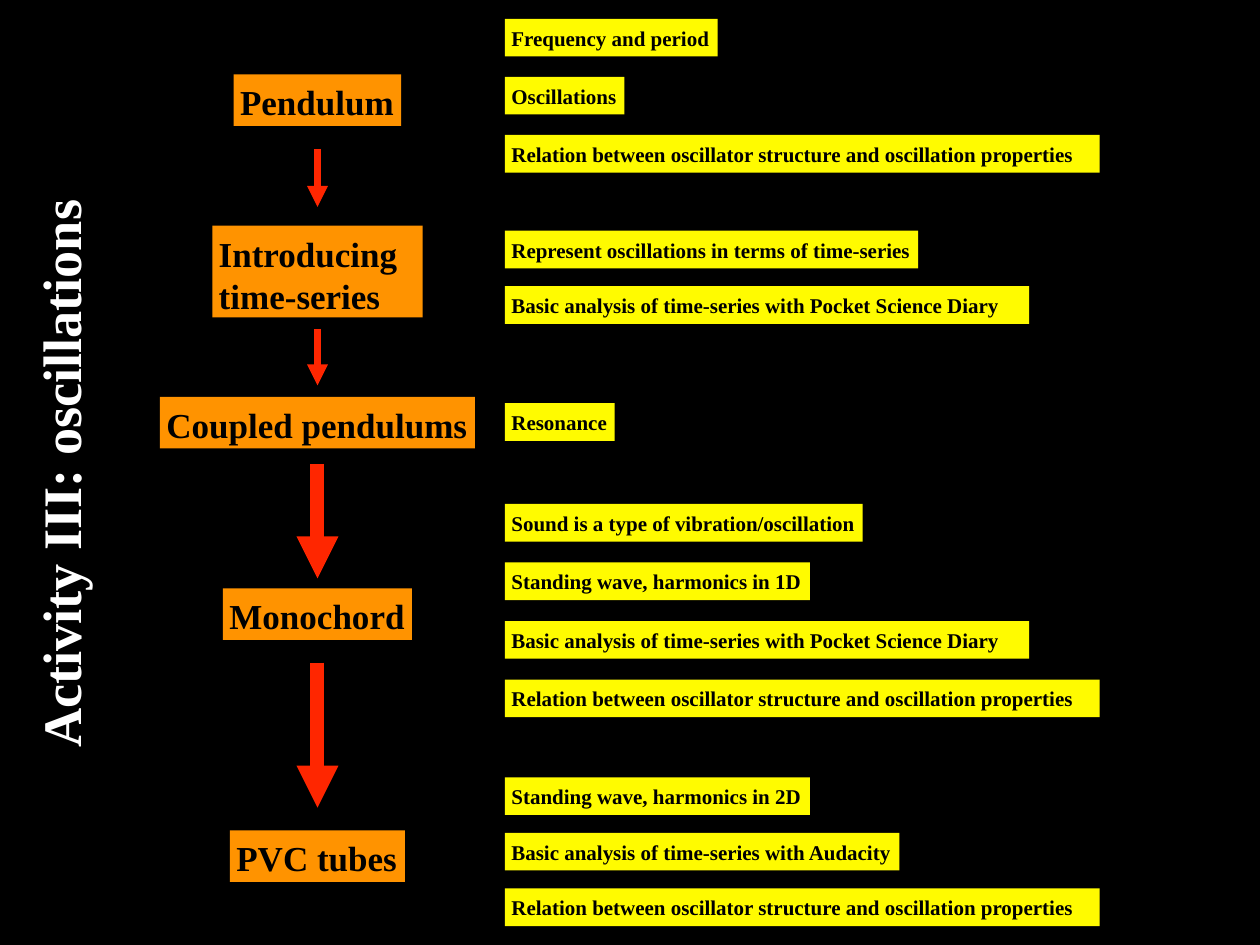
from lxml import etree
from pptx import Presentation
from pptx import util as u
from pptx.dml.color import RGBColor
from pptx.enum import shapes, text
from pptx.oxml.ns import qn

FONT = "Times New Roman"
BLACK, WHITE, ORANGE, YELLOW, RED = "000000", "FFFFFF", "FF9300", "FFFB00", "FF2600"

TITLE = "Activity III: oscillations"
STRUCTURE = ("Relation between oscillator structure and oscillation properties", 11.99)
DIARY = ("Basic analysis of time-series with Pocket Science Diary", 10.57)

# All lengths in cm; each topic is (wording, width).
STAGES = [
    {"name": "Pendulum", "top": 1.5, "width": 3.38, "height": 1.04,
     "topics_top": 0.38, "pitch": 1.17,
     "topics": [("Frequency and period", 4.29), ("Oscillations", 2.41), STRUCTURE]},
    {"name": "Introducing\ntime-series", "top": 4.55, "width": 4.24, "height": 1.85,
     "topics_top": 4.65, "pitch": 1.12,
     "topics": [("Represent oscillations in terms of time-series", 8.33), DIARY]},
    {"name": "Coupled pendulums", "top": 8.0, "width": 6.35, "height": 1.04,
     "topics_top": 8.13, "pitch": 1.12,
     "topics": [("Resonance", 2.21)]},
    {"name": "Monochord", "top": 11.86, "width": 3.81, "height": 1.04,
     "topics_top": 10.16, "pitch": 1.18,
     "topics": [("Sound is a type of vibration/oscillation", 7.21),
                ("Standing wave, harmonics in 1D", 6.15), DIARY, STRUCTURE]},
    {"name": "PVC tubes", "top": 16.74, "width": 3.53, "height": 1.04,
     "topics_top": 15.67, "pitch": 1.12,
     "topics": [("Standing wave, harmonics in 2D", 6.15),
                ("Basic analysis of time-series with Audacity", 7.95), STRUCTURE]},
]
# Start, end, line width in points
ARROWS = [(3.0, 4.17, 4), (6.63, 7.77, 4), (9.35, 11.66, 8), (13.36, 16.28, 8)]

STAGE_CENTRE, TOPIC_LEFT, TOPIC_HEIGHT = 6.4, 10.18, 0.76


def rgb(value):
    return RGBColor.from_string(value)


def add_label(slide, wording, left, top, width, height, size, color, fill=None, wrap=False):
    label = slide.shapes.add_textbox(u.Cm(left), u.Cm(top), u.Cm(width), u.Cm(height))
    if fill:
        label.fill.solid()
        label.fill.fore_color.rgb = rgb(fill)
    frame = label.text_frame
    frame.margin_left = frame.margin_right = u.Cm(0.13)
    frame.margin_top = frame.margin_bottom = u.Cm(0.13)
    frame.word_wrap = wrap
    frame.auto_size = text.MSO_AUTO_SIZE.SHAPE_TO_FIT_TEXT
    frame.text = wording
    for paragraph in frame.paragraphs:
        for run in paragraph.runs:
            run.font.name = FONT
            run.font.size = u.Pt(size)
            run.font.bold = True
            run.font.color.rgb = rgb(color)
    return label


def add_down_arrow(slide, start, end, weight):
    arrow = slide.shapes.add_connector(
        shapes.MSO_CONNECTOR.STRAIGHT,
        u.Cm(STAGE_CENTRE), u.Cm(start), u.Cm(STAGE_CENTRE), u.Cm(end))
    arrow.line.color.rgb = rgb(RED)
    arrow.line.width = u.Pt(weight)
    etree.SubElement(arrow.line._get_or_add_ln(), qn("a:tailEnd"), type="triangle")
    etree.SubElement(arrow._element.spPr, qn("a:effectLst"))


def main():
    deck = Presentation()
    deck.slide_width, deck.slide_height = u.Cm(25.4), u.Cm(19.05)
    slide = deck.slides.add_slide(deck.slide_layouts[6])
    slide.background.fill.solid()
    slide.background.fill.fore_color.rgb = rgb(BLACK)

    for stage in STAGES:
        add_label(slide, stage["name"], STAGE_CENTRE - stage["width"] / 2, stage["top"],
                  stage["width"], stage["height"], 20, BLACK, ORANGE)
        for row, topic in enumerate(stage["topics"]):
            wording, width = topic
            add_label(slide, wording, TOPIC_LEFT, stage["topics_top"] + row * stage["pitch"],
                      width, TOPIC_HEIGHT, 12, BLACK, YELLOW, wrap=topic == STRUCTURE)

    title = add_label(slide, TITLE, -4.52, 8.79, 11.35, 1.47, 31, WHITE)
    title.rotation = 270

    for start, end, weight in ARROWS:
        add_down_arrow(slide, start, end, weight)

    deck.save("out.pptx")


if __name__ == "__main__":
    main()
